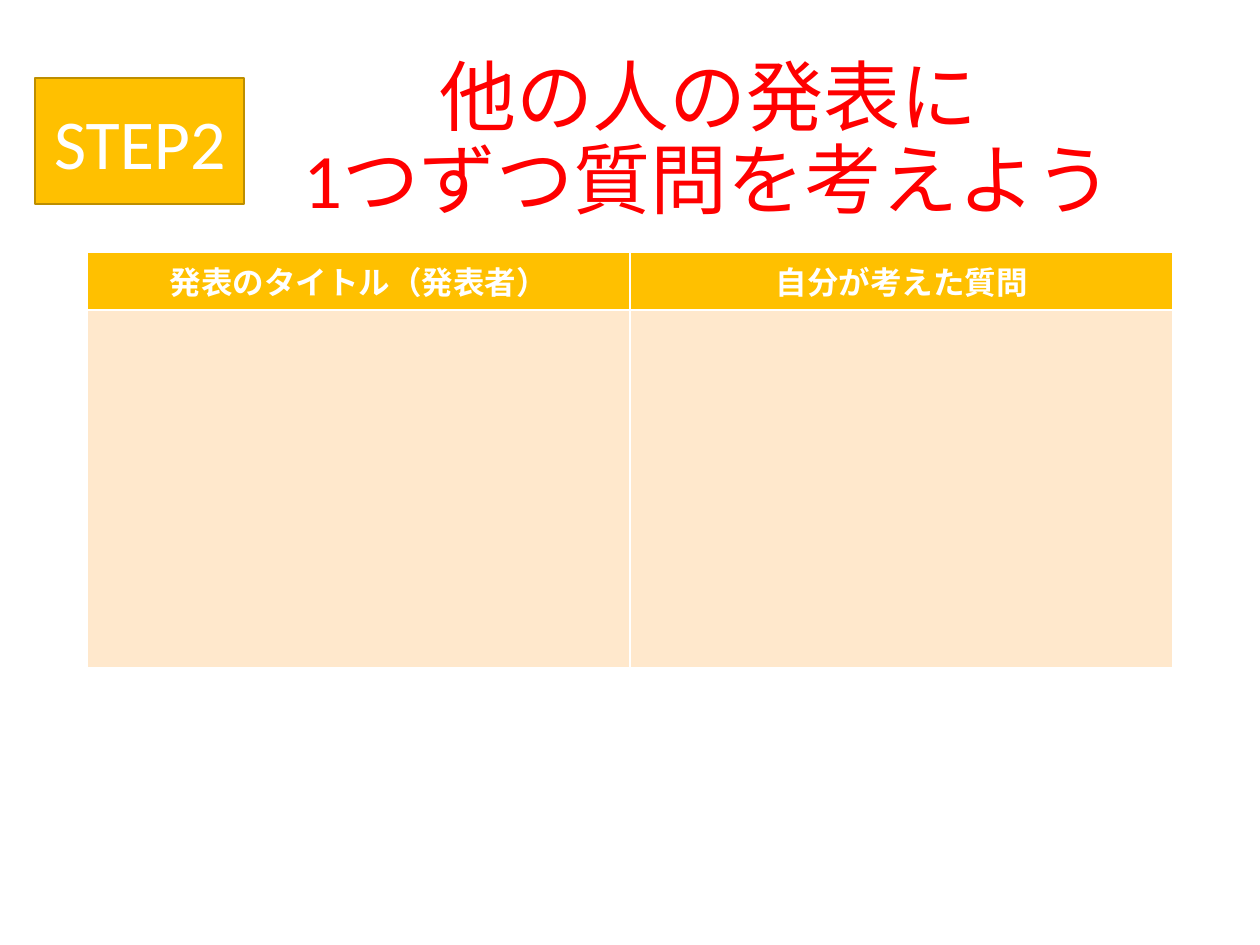
"""Build a worksheet slide with a step badge, a title and a question table."""
from pptx import Presentation
from pptx.dml.color import RGBColor
from pptx.enum.shapes import MSO_SHAPE
from pptx.enum.text import MSO_ANCHOR, MSO_AUTO_SIZE, PP_ALIGN
from pptx.util import Inches, Pt


def rgb(value):
    return RGBColor.from_string(value)


def style(p, size, color, bold=False):
    p.alignment = PP_ALIGN.CENTER
    p.font.name = "Calibri"
    p.font.size = Pt(size)
    p.font.bold = bold
    p.font.color.rgb = rgb(color)


prs = Presentation()
prs.slide_width, prs.slide_height = Inches(10), Inches(7.5)
s = prs.slides.add_slide(prs.slide_layouts[5])

title = s.shapes.title
title.left, title.top = Inches(1.94), Inches(0.4)
title.width, title.height = Inches(7.37), Inches(1.45)
tf = title.text_frame
tf.text = "他の人の発表に\v1つずつ質問を考えよう"
tf.auto_size = MSO_AUTO_SIZE.NONE
tf.vertical_anchor = MSO_ANCHOR.MIDDLE
p = tf.paragraphs[0]
p.line_spacing = 0.9
style(p, 44, "FF0000")

badge = s.shapes.add_shape(MSO_SHAPE.RECTANGLE, Inches(0.28), Inches(0.62), Inches(1.66), Inches(1))
badge.shadow.inherit = False
badge.fill.solid()
badge.fill.fore_color.rgb = rgb("FFC000")
badge.line.color.rgb = rgb("BD8E00")
badge.line.width = Pt(1)
tf = badge.text_frame
tf.text = "STEP2"
tf.vertical_anchor = MSO_ANCHOR.MIDDLE
style(tf.paragraphs[0], 40, "FFFFFF")

table = s.shapes.add_table(2, 2, Inches(0.69), Inches(2), Inches(8.62), Inches(3.3)).table
table.rows[0].height, table.rows[1].height = Inches(0.46), Inches(2.84)
for col, heading in enumerate(["発表のタイトル（発表者）", "自分が考えた質問"]):
    for row, fill in enumerate(["FFC000", "FFE8CC"]):
        cell = table.cell(row, col)
        cell.fill.solid()
        cell.fill.fore_color.rgb = rgb(fill)
    head = table.cell(0, col)
    head.text = heading
    style(head.text_frame.paragraphs[0], 18, "FFFFFF", bold=True)

prs.save("out.pptx")
